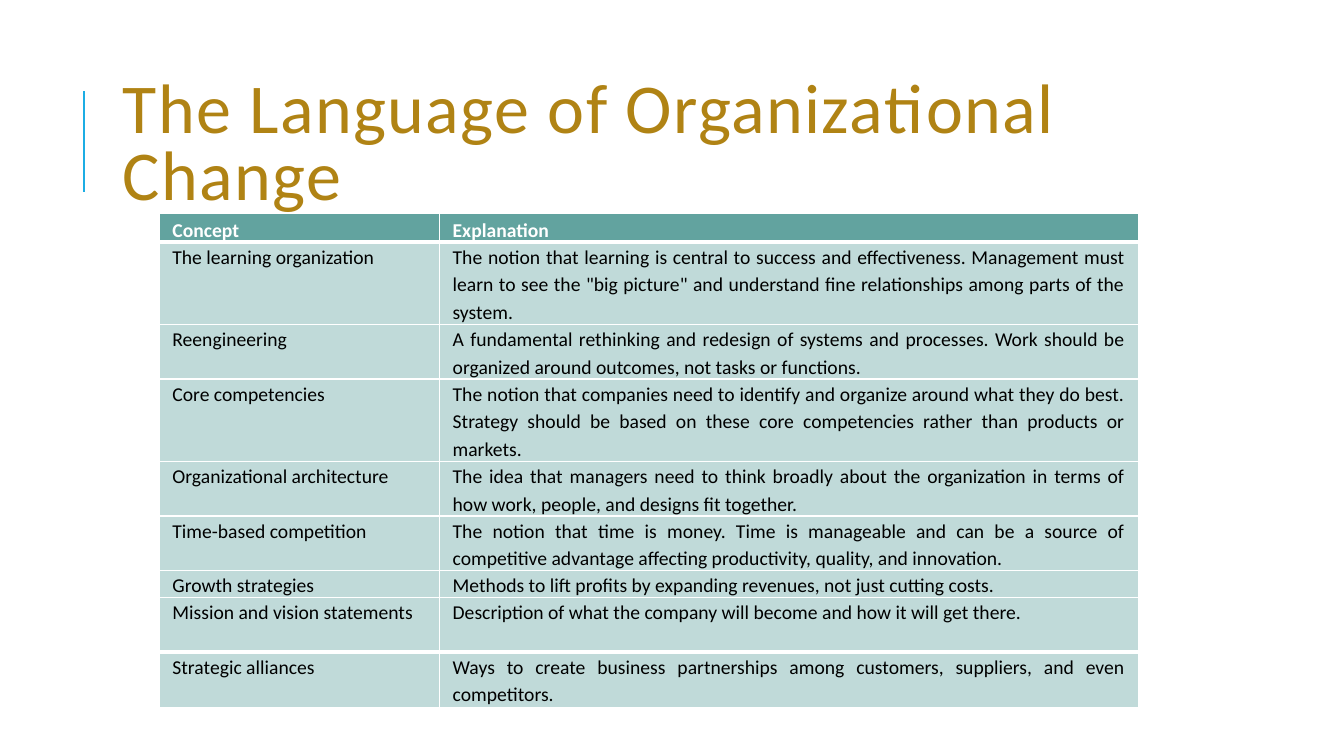
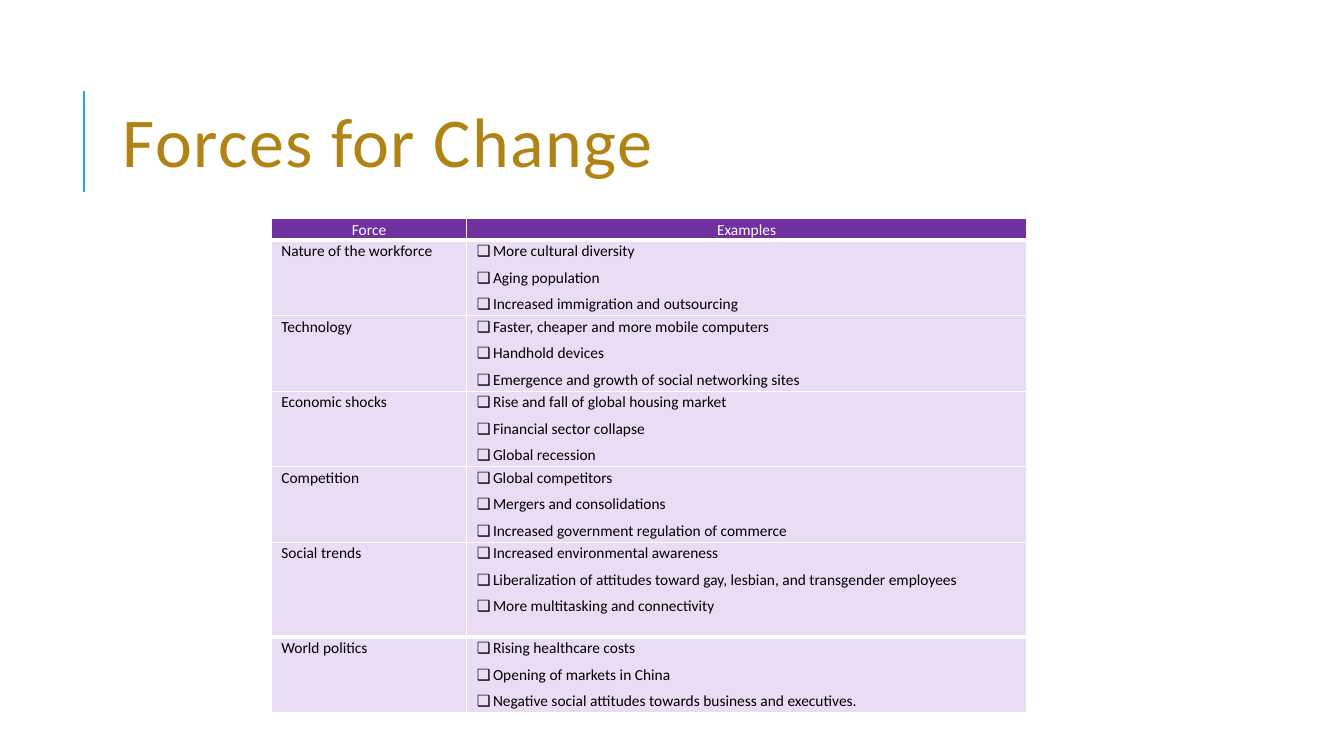
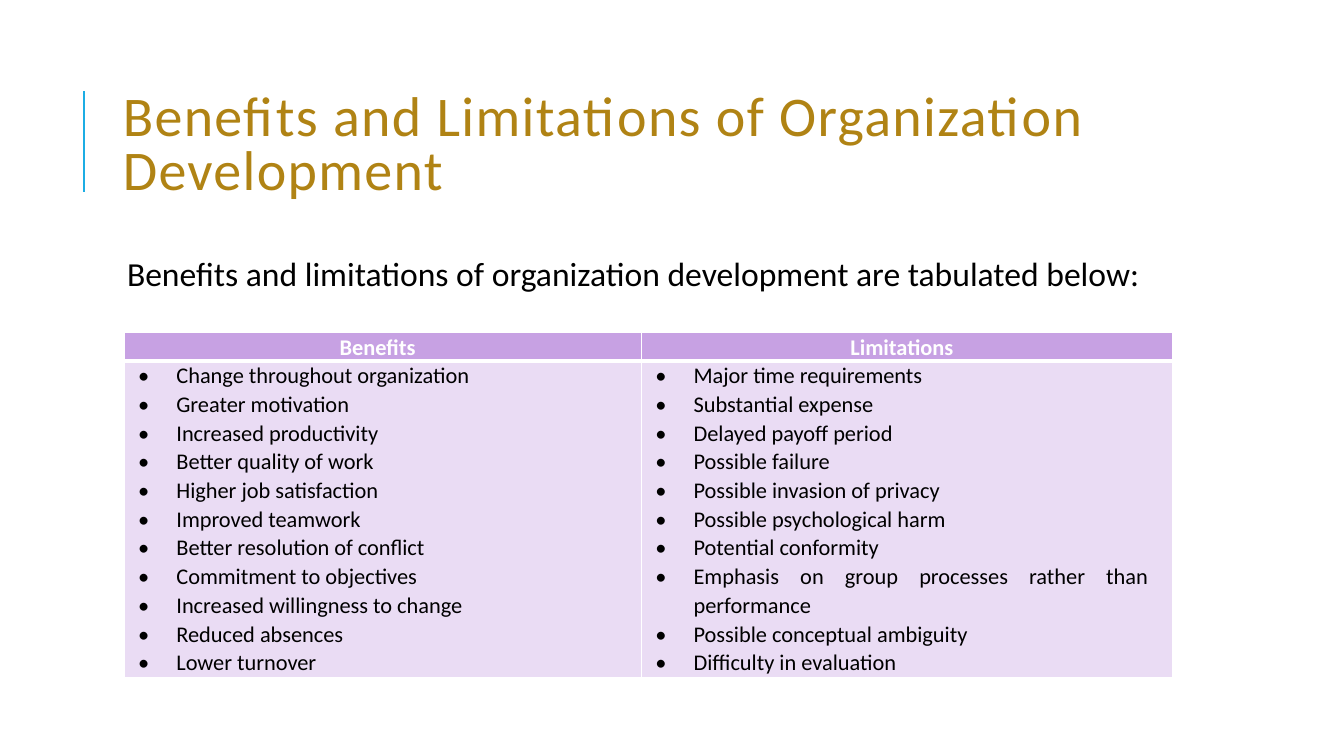
from dataclasses import dataclass
from typing import Any

from lxml.etree import SubElement
from pptx import Presentation
from pptx.dml.color import RGBColor
from pptx.enum.shapes import MSO_CONNECTOR
from pptx.enum.text import MSO_ANCHOR, PP_ALIGN as Align
from pptx.oxml.ns import qn
from pptx.util import Inches, Pt

FONT = "Calibri"
COLORS = {
    "title": "B08314",
    "accent": "1CADE4",
    "text": "000000",
    "white": "FFFFFF",
    "teal": "62A39F",
    "pale_teal": "C0DAD9",
    "purple": "7030A0",
    "lilac": "C7A1E3",
    "pale_lilac": "EADCF4",
}
TITLE_LEFT, TITLE_WIDTH = 1.12, 10.63
THIN, THICK = 1, 3

Content = str | tuple[str, ...]


@dataclass(frozen=True)
class TextStyle:
    size: float
    color: str = "text"
    bold: bool = False
    align: Align = Align.LEFT
    line_spacing: float = 1.0
    gap: float = 0
    tracking: float = 0
    indent: float = 0
    right_indent: float = 0
    bullet: str = ""


@dataclass(frozen=True)
class TableDesign:
    left: float
    top: float
    columns: tuple[float, ...]
    rows: tuple[float, ...]
    side_margin: float
    header_fill: str
    body_fill: str
    header: TextStyle
    body: tuple[TextStyle, ...]


@dataclass(frozen=True)
class TableSlide:
    title: str
    title_size: float
    design: TableDesign
    cells: tuple[tuple[Content, ...], ...]
    intro: str = ""


def rgb(name: str) -> RGBColor:
    return RGBColor.from_string(COLORS[name])


def set_formats(target: Any, formats: dict[str, Any]) -> None:
    for attribute, value in formats.items():
        setattr(target, attribute, value)


def write(frame: Any, content: Content, style: TextStyle) -> None:
    """Fill a text frame with one paragraph per line of the content."""
    lines = (content,) if isinstance(content, str) else content
    for index, line in enumerate(lines):
        paragraph = frame.paragraphs[0] if index == 0 else frame.add_paragraph()
        properties = paragraph._p.get_or_add_pPr()
        for side, length in {"marL": style.indent, "marR": style.right_indent}.items():
            if length:
                properties.set(side, str(Inches(length)))
        if style.bullet:
            properties.set("indent", str(-Inches(style.indent)))
            SubElement(properties, qn("a:buFont")).set("typeface", FONT)
            SubElement(properties, qn("a:buChar")).set("char", style.bullet)
        set_formats(paragraph, {
            "alignment": style.align,
            "line_spacing": style.line_spacing,
            "space_before": Pt(style.gap if index else 0),
        })
        run = paragraph.add_run()
        run.text = line
        set_formats(run.font, {"name": FONT, "size": Pt(style.size), "bold": style.bold})
        run.font.color.rgb = rgb(style.color)
        if style.tracking:
            run._r.get_or_add_rPr().set("spc", str(int(style.tracking * 100)))


def add_text(slide: Any, box: tuple[float, ...], text: str, style: TextStyle,
             margin: float, anchor: MSO_ANCHOR) -> None:
    frame = slide.shapes.add_textbox(*map(Inches, box)).text_frame
    set_formats(frame, {
        "word_wrap": True,
        "vertical_anchor": anchor,
        "margin_left": Inches(margin),
        "margin_right": Inches(margin),
        "margin_top": Inches(0.05),
        "margin_bottom": Inches(0.05),
    })
    write(frame, text, style)


def add_heading(slide: Any, title: str, size: float) -> None:
    rule = slide.shapes.add_connector(
        MSO_CONNECTOR.STRAIGHT, Inches(0.83), Inches(1.9), Inches(0.83), Inches(0.9))
    rule.line.color.rgb = rgb("accent")
    rule.line.width = Pt(1.5)
    SubElement(rule._element.spPr, qn("a:effectLst"))
    style = TextStyle(size, "title", line_spacing=0.8, tracking=1)
    add_text(slide, (TITLE_LEFT, 0.64, TITLE_WIDTH, 1.64), title, style, 0.1, MSO_ANCHOR.MIDDLE)


def add_borders(cell: Any, above: float, below: float) -> None:
    properties = cell._tc.get_or_add_tcPr()
    for side, width in {"L": THIN, "R": THIN, "T": above, "B": below}.items():
        edge = SubElement(properties, qn(f"a:ln{side}"))
        edge.set("w", str(Pt(width)))
        fill = SubElement(edge, qn("a:solidFill"))
        SubElement(fill, qn("a:srgbClr")).set("val", COLORS["white"])


def add_table(slide: Any, design: TableDesign, cells: tuple[tuple[Content, ...], ...]) -> None:
    """Draw the grid with thick rules under the header and above the last row."""
    box = (design.left, design.top, sum(design.columns), sum(design.rows))
    table = slide.shapes.add_table(
        len(design.rows), len(design.columns), *map(Inches, box)).table
    table.horz_banding = False
    for column, width in zip(table.columns, design.columns):
        column.width = Inches(width)
    for row, height in zip(table.rows, design.rows):
        row.height = Inches(height)

    thick_above = {1, len(design.rows) - 1}
    for r, contents in enumerate(cells):
        for c, content in enumerate(contents):
            cell = table.cell(r, c)
            set_formats(cell, {
                "margin_left": Inches(design.side_margin),
                "margin_right": Inches(design.side_margin),
                "margin_top": 0,
                "margin_bottom": 0,
            })
            add_borders(cell, *(THICK if edge in thick_above else THIN for edge in (r, r + 1)))
            cell.fill.solid()
            cell.fill.fore_color.rgb = rgb(design.body_fill if r else design.header_fill)
            write(cell.text_frame, content, design.body[c] if r else design.header)


def add_table_slide(deck: Any, page: TableSlide) -> None:
    slide = deck.slides.add_slide(deck.slide_layouts[6])
    add_heading(slide, page.title, page.title_size)
    if page.intro:
        style = TextStyle(24, align=Align.JUSTIFY, line_spacing=0.9, indent=0.09)
        add_text(slide, (TITLE_LEFT, 2.51, TITLE_WIDTH, 0.6), page.intro, style,
                 0.05, MSO_ANCHOR.TOP)
    add_table(slide, page.design, page.cells)


CONCEPT_DESIGN = TableDesign(
    left=1.58, top=2.12, columns=(2.78, 6.93),
    rows=(0.27, 0.82, 0.54, 0.82, 0.54, 0.54, 0.27, 0.54, 0.55),
    side_margin=0.13, header_fill="teal", body_fill="pale_teal",
    header=TextStyle(14, "white", True, Align.JUSTIFY, 1.2),
    body=(TextStyle(14, line_spacing=1.15),
          TextStyle(14, align=Align.JUSTIFY, line_spacing=1.15)),
)
FORCE_DESIGN = TableDesign(
    left=2.69, top=2.17, columns=(1.94, 5.55),
    rows=(0.21, 0.75, 0.75, 0.75, 0.75, 0.94, 0.75),
    side_margin=0.1, header_fill="purple", body_fill="pale_lilac",
    header=TextStyle(11, "white", align=Align.CENTER, line_spacing=1.1),
    body=(TextStyle(11, align=Align.JUSTIFY, line_spacing=1.1),
          TextStyle(11, align=Align.JUSTIFY, line_spacing=1.1, gap=4, indent=0.16, bullet="❑")),
)
BENEFIT_DESIGN = TableDesign(
    left=1.23, top=3.3, columns=(5.13, 5.27), rows=(0.28, 3.14),
    side_margin=0.14, header_fill="lilac", body_fill="pale_lilac",
    header=TextStyle(16, "white", True, Align.CENTER, 1.05, indent=0.1, right_indent=0.2),
    body=(TextStyle(16, align=Align.JUSTIFY, line_spacing=1.05, indent=0.38,
                    right_indent=0.1, bullet="•"),) * 2,
)

PAGES = (
    TableSlide("The Language of Organizational Change", 50, CONCEPT_DESIGN, (
        ("Concept", "Explanation"),
        ("The learning organization",
         "The notion that learning is central to success and effectiveness. Management must "
         "learn to see the \"big picture\" and understand fine relationships among parts of "
         "the system."),
        ("Reengineering",
         "A fundamental rethinking and redesign of systems and processes. Work should be "
         "organized around outcomes, not tasks or functions."),
        ("Core competencies",
         "The notion that companies need to identify and organize around what they do best. "
         "Strategy should be based on these core competencies rather than products or markets."),
        ("Organizational architecture",
         "The idea that managers need to think broadly about the organization in terms of how "
         "work, people, and designs fit together."),
        ("Time-based competition",
         "The notion that time is money. Time is manageable and can be a source of competitive "
         "advantage affecting productivity, quality, and innovation."),
        ("Growth strategies",
         "Methods to lift profits by expanding revenues, not just cutting costs."),
        ("Mission and vision statements",
         "Description of what the company will become and how it will get there."),
        ("Strategic alliances",
         "Ways to create business partnerships among customers, suppliers, and even "
         "competitors."),
    )),
    TableSlide("Forces for Change", 50, FORCE_DESIGN, (
        ("Force", "Examples"),
        ("Nature of the workforce", (
            "More cultural diversity",
            "Aging population",
            "Increased immigration and outsourcing")),
        ("Technology", (
            "Faster, cheaper and more mobile computers",
            "Handhold devices",
            "Emergence and growth of social networking sites")),
        ("Economic shocks", (
            "Rise and fall of global housing market",
            "Financial sector collapse",
            "Global recession")),
        ("Competition", (
            "Global competitors",
            "Mergers and consolidations",
            "Increased government regulation of commerce")),
        ("Social trends", (
            "Increased environmental awareness",
            "Liberalization of attitudes toward gay, lesbian, and transgender employees",
            "More multitasking and connectivity")),
        ("World politics", (
            "Rising healthcare costs",
            "Opening of markets in China",
            "Negative social attitudes towards business and executives.")),
    )),
    TableSlide("Benefits and Limitations of Organization Development", 40, BENEFIT_DESIGN, (
        ("Benefits", "Limitations"),
        ((
            "Change throughout organization",
            "Greater motivation",
            "Increased productivity",
            "Better quality of work",
            "Higher job satisfaction",
            "Improved teamwork",
            "Better resolution of conflict",
            "Commitment to objectives",
            "Increased willingness to change",
            "Reduced absences",
            "Lower turnover",
        ), (
            "Major time requirements",
            "Substantial expense",
            "Delayed payoff period",
            "Possible failure",
            "Possible invasion of privacy",
            "Possible psychological harm",
            "Potential conformity",
            "Emphasis on group processes rather than performance",
            "Possible conceptual ambiguity",
            "Difficulty in evaluation",
        )),
    ), intro="Benefits and limitations of organization development are tabulated below:"),
)


def main() -> None:
    deck = Presentation()
    set_formats(deck, {"slide_width": Inches(13.33), "slide_height": Inches(7.5)})
    for page in PAGES:
        add_table_slide(deck, page)
    deck.save("out.pptx")


if __name__ == "__main__":
    main()
